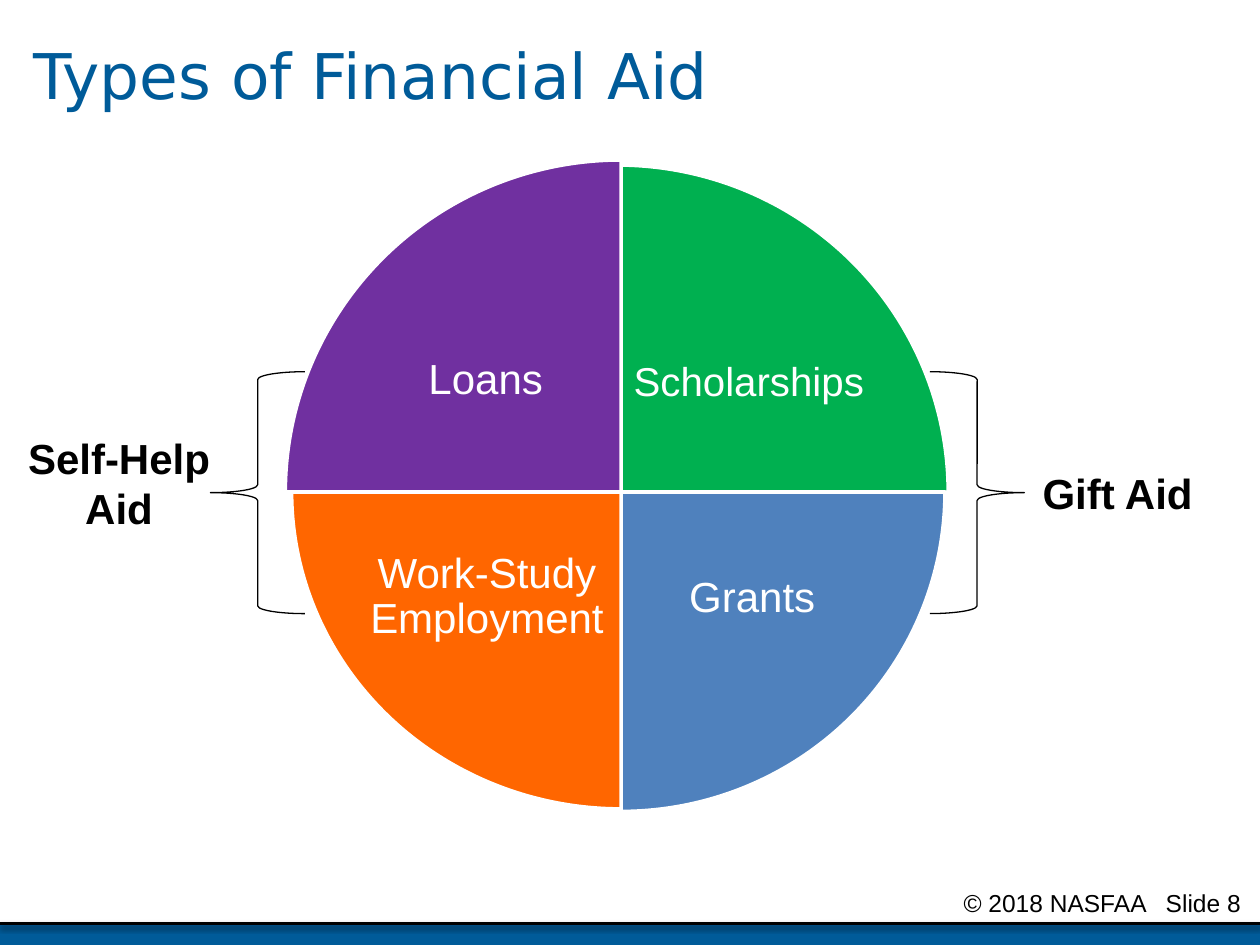
from dataclasses import dataclass

from lxml.etree import SubElement
from pptx import Presentation
from pptx.dml.color import RGBColor
from pptx.enum.shapes import MSO_CONNECTOR, MSO_SHAPE
from pptx.enum.text import MSO_ANCHOR, PP_ALIGN
from pptx.oxml.ns import qn
from pptx.util import Emu, Inches, Pt


@dataclass(frozen=True)
class Theme:
    brand: str = "005B99"
    ink: str = "000000"
    paper: str = "FFFFFF"
    green: str = "00B050"
    blue: str = "4F81BD"
    orange: str = "FF6600"
    purple: str = "7030A0"
    heading_font: str = "DejaVu Sans"
    body_font: str = "Arial"
    title_size: int = 36
    label_size: int = 24
    tight_size: int = 23
    footer_size: int = 14


THEME = Theme()
WIDTH, HEIGHT = 10, 7.5
FOOTER_TOP = 7.33
PIE_Y = 3.905
QUARTER = 54  # 90 degrees in the units of the pie's adjustments

TITLE = "Types of Financial Aid"
FOOTER = "© 2018 NASFAA   Slide 8"

# text, colour, first quarter (clockwise from the right), pie centre x, pie size,
# label centre, label size, type size, alignment
SLICES = [
    ("Scholarships", THEME.green, 3, 4.9, (5.25, 5.19),
     (5.92, 3.045), (1.94, 1.55), THEME.tight_size, PP_ALIGN.RIGHT),
    ("Grants", THEME.blue, 0, 4.93, (5.14, 5.07),
     (5.97, 4.755), (1.9, 1.51), THEME.label_size, PP_ALIGN.CENTER),
    ("Work-Study Employment", THEME.orange, 1, 4.93, (5.23, 5.03),
     (3.865, 4.74), (1.93, 1.5), THEME.label_size, PP_ALIGN.CENTER),
    ("Loans", THEME.purple, 2, 4.93, (5.33, 5.27),
     (3.855, 3.025), (1.97, 1.57), THEME.label_size, PP_ALIGN.CENTER),
]

# text, text box, brace shape, brace left
GROUPS = [
    ("Gift Aid", (8.06, 3.66, 1.62, 0.5), MSO_SHAPE.RIGHT_BRACE, 7.38),
    ("Self-Help Aid", (0.11, 3.38, 1.67, 0.91), MSO_SHAPE.LEFT_BRACE, 1.67),
]
BRACE_TOP, BRACE_WIDTH, BRACE_HEIGHT = 2.95, 0.75, 1.92


def rgb(colour):
    return RGBColor.from_string(colour)


def centred(center, size):
    """Frame (left, top, width, height) of a size placed around a centre."""
    (x, y), (width, height) = center, size
    return x - width / 2, y - height / 2, width, height


def add_shape(page, kind, frame, fill=None, line=None, weight=0.75, adjust=()):
    shape = page.shapes.add_shape(kind, *map(Inches, frame))
    shape.shadow.inherit = False
    if fill:
        shape.fill.solid()
        shape.fill.fore_color.rgb = rgb(fill)
    else:
        shape.fill.background()
    if line:
        shape.line.color.rgb = rgb(line)
        shape.line.width = Pt(weight)
    else:
        shape.line.fill.background()
    for index, value in enumerate(adjust):
        shape.adjustments[index] = value
    return shape


def add_text(page, text, frame, size, colour, align=PP_ALIGN.LEFT, font=THEME.body_font,
             bold=False, anchor=MSO_ANCHOR.TOP, spacing=1.0, insets=(0.1, 0.05, 0.1, 0.05)):
    box = page.shapes.add_textbox(*map(Inches, frame)).text_frame
    box.word_wrap = True
    box.vertical_anchor = anchor
    box.margin_left, box.margin_top, box.margin_right, box.margin_bottom = map(Inches, insets)
    box.text = text
    para = box.paragraphs[0]
    para.alignment = align
    para.line_spacing = spacing
    span = para.runs[0].font
    span.name, span.size, span.bold = font, Pt(size), bold
    span.color.rgb = rgb(colour)


def add_footer(page):
    add_shape(page, MSO_SHAPE.RECTANGLE, (0, FOOTER_TOP, WIDTH, HEIGHT - FOOTER_TOP), THEME.brand)
    rule = page.shapes.add_connector(
        MSO_CONNECTOR.STRAIGHT, *map(Inches, (0, FOOTER_TOP, WIDTH, FOOTER_TOP)))
    rule.line.color.rgb = rgb(THEME.ink)
    rule.line.width = Pt(2)
    effects = SubElement(rule._element.spPr, qn("a:effectLst"))
    shadow = SubElement(effects, qn("a:outerShdw"), blurRad=str(Pt(3.1)), dist=str(Pt(1.6)),
                        dir="5400000", rotWithShape="0")
    tint = SubElement(shadow, qn("a:srgbClr"), val=THEME.ink)
    SubElement(tint, qn("a:alpha"), val="38000")
    add_text(page, FOOTER, (6.25, 7, 3.75, 0.25), THEME.footer_size, THEME.ink,
             PP_ALIGN.RIGHT, insets=(0.1, 0.05, 0.15, 0.05))


def add_slices(page):
    for text, colour, quarter, pie_x, pie_size, center, size, type_size, align in SLICES:
        start, end = quarter * QUARTER, (quarter + 1) % 4 * QUARTER
        add_shape(page, MSO_SHAPE.PIE, centred((pie_x, PIE_Y), pie_size), colour,
                  THEME.paper, 2, (start, end))
        add_text(page, text, centred(center, size), type_size, THEME.paper, align,
                 anchor=MSO_ANCHOR.MIDDLE, spacing=0.9, insets=(0.03,) * 4)


def add_groups(page):
    for text, frame, brace, left in GROUPS:
        add_shape(page, brace, (left, BRACE_TOP, BRACE_WIDTH, BRACE_HEIGHT),
                  line=THEME.ink, adjust=(0.083, 0.5))
        add_text(page, text, frame, THEME.label_size, THEME.ink, PP_ALIGN.CENTER, bold=True)


def main():
    deck = Presentation()
    deck.slide_width, deck.slide_height = Emu(Inches(WIDTH)), Emu(Inches(HEIGHT))
    page = deck.slides.add_slide(deck.slide_layouts[6])
    add_footer(page)
    add_text(page, TITLE, (0.17, 0, 9.67, 1.25), THEME.title_size, THEME.brand,
             font=THEME.heading_font, anchor=MSO_ANCHOR.MIDDLE, spacing=0.9)
    add_slices(page)
    add_groups(page)
    deck.save("out.pptx")


if __name__ == "__main__":
    main()
